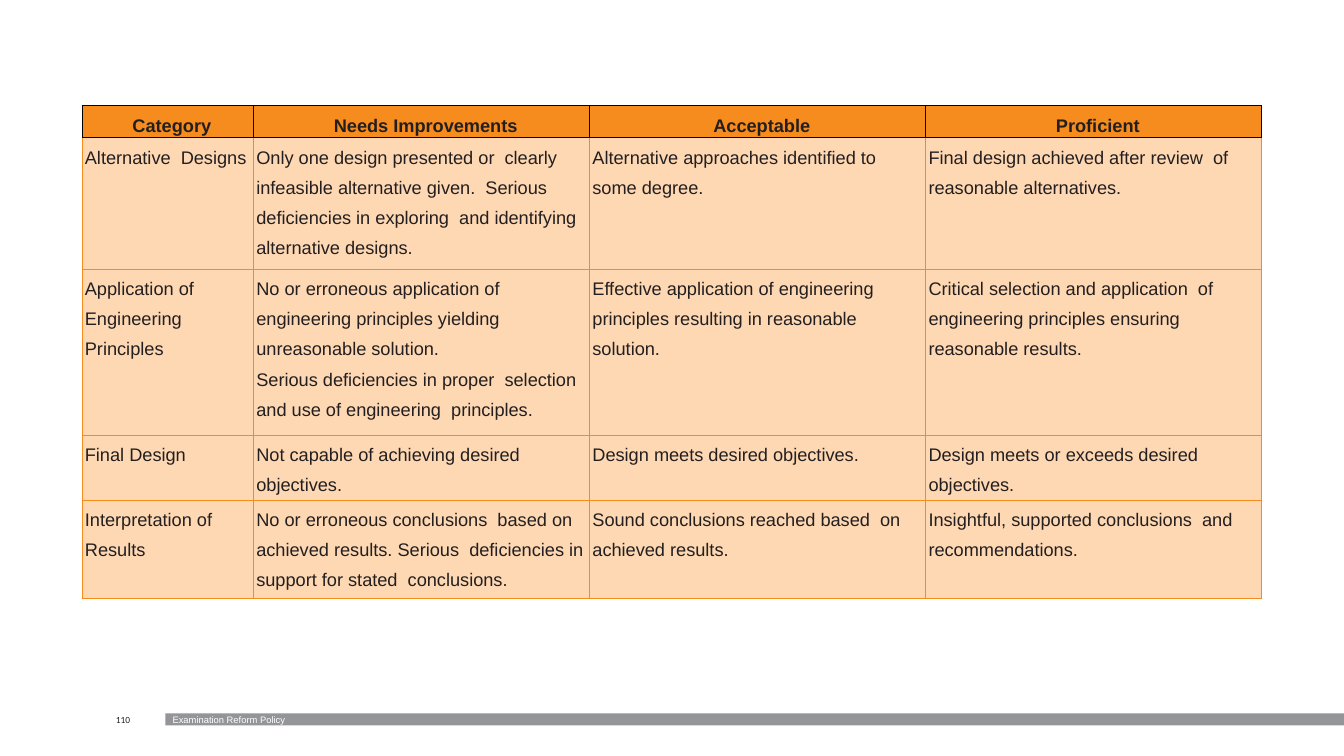
"""Build the design assessment rubric slide."""
from lxml import etree
from pptx import Presentation
from pptx.dml.color import RGBColor
from pptx.enum.shapes import MSO_SHAPE
from pptx.enum.text import MSO_ANCHOR, PP_ALIGN
from pptx.oxml.ns import qn
from pptx.util import Cm, Pt

RECTANGLE = MSO_SHAPE.RECTANGLE
TOP, MIDDLE = MSO_ANCHOR.TOP, MSO_ANCHOR.MIDDLE
LEFT, CENTER = PP_ALIGN.LEFT, PP_ALIGN.CENTER

INK = RGBColor(0x23, 0x1F, 0x20)
BLACK = RGBColor(0, 0, 0)
WHITE = RGBColor(0xFF, 0xFF, 0xFF)
ORANGE = RGBColor(0xF6, 0x8B, 0x1E)
PEACH = RGBColor(0xFE, 0xD8, 0xB3)
GRAY = RGBColor(0x93, 0x95, 0x98)

COLUMN_WIDTHS = [4.32, 8.47, 8.47, 8.47]
ROW_HEIGHTS = [0.8, 3.32, 4.17, 1.64, 2.47]
RUBRIC = [
    ["Category", "Needs Improvements", "Acceptable", "Proficient"],
    ["Alternative  Designs",
     "Only one design presented or  clearly infeasible alternative given.  Serious "
     "deficiencies in exploring  and identifying alternative designs.",
     "Alternative approaches identified to some degree.",
     "Final design achieved after review  of reasonable alternatives."],
    ["Application of  Engineering  Principles",
     "No or erroneous application of  engineering principles yielding  unreasonable solution.\n"
     "Serious deficiencies in proper  selection and use of engineering  principles.",
     "Effective application of engineering  principles resulting in reasonable  solution.",
     "Critical selection and application  of engineering principles ensuring  reasonable results."],
    ["Final Design",
     "Not capable of achieving desired  objectives.",
     "Design meets desired objectives.",
     "Design meets or exceeds desired  objectives."],
    ["Interpretation of  Results",
     "No or erroneous conclusions  based on achieved results. Serious  deficiencies in "
     "support for stated  conclusions.",
     "Sound conclusions reached based  on achieved results.",
     "Insightful, supported conclusions  and recommendations."],
]


def style_text(frame, font, size, color, align, indent, spacing, bold=False):
    for para in frame.paragraphs:
        para.alignment = align
        para.line_spacing = spacing
        para._p.get_or_add_pPr().set("marL", str(Cm(indent)))
        for span in para.runs:
            span.font.name = font
            span.font.size = Pt(size)
            span.font.bold = bold
            span.font.color.rgb = color


def add_borders(cell, colors):
    properties = cell._tc.get_or_add_tcPr()
    for side, color in zip("LRTB", colors):
        line = etree.SubElement(properties, qn(f"a:ln{side}"), w=str(Pt(0.75)))
        fill = etree.SubElement(line, qn("a:solidFill"))
        etree.SubElement(fill, qn("a:srgbClr"), val=str(color))


deck = Presentation()
deck.slide_width, deck.slide_height = Cm(33.87), Cm(19.05)
page = deck.slides.add_slide(deck.slide_layouts[6])

number_box = page.shapes.add_textbox(Cm(2.06), Cm(17.98), Cm(2.08), Cm(0.3))
number_box.text_frame.text = "110"
style_text(number_box.text_frame, "Calibri", 6.7, INK, CENTER, 0, 1.1)

rubric = page.shapes.add_table(
    len(ROW_HEIGHTS), len(COLUMN_WIDTHS), Cm(2.07), Cm(2.66),
    Cm(sum(COLUMN_WIDTHS)), Cm(sum(ROW_HEIGHTS))).table
rubric.first_row = rubric.horz_banding = False
for column, width in zip(rubric.columns, COLUMN_WIDTHS):
    column.width = Cm(width)
for row_index, (row, height) in enumerate(zip(rubric.rows, ROW_HEIGHTS)):
    row.height = Cm(height)
    is_header = row_index == 0
    for cell, wording in zip(row.cells, RUBRIC[row_index]):
        cell.text = wording
        cell.margin_left = cell.margin_top = cell.margin_bottom = 0
        cell.margin_right = Cm(0 if is_header else 0.08)
        cell.vertical_anchor = MIDDLE if is_header else TOP
        style_text(cell.text_frame, "Arial", 13, INK, CENTER if is_header else LEFT,
                   0.2 if is_header else 0.07, 1.48, is_header)
        side_color = BLACK if is_header else ORANGE
        top_color = BLACK if row_index < 2 else ORANGE
        add_borders(cell, [side_color, side_color, top_color, side_color])
        cell.fill.solid()
        cell.fill.fore_color.rgb = ORANGE if is_header else PEACH

footer_bar = page.shapes.add_shape(RECTANGLE, Cm(4.17), Cm(17.98), Cm(29.7), Cm(0.3))
footer_bar.shadow.inherit = False
footer_bar.fill.solid()
footer_bar.fill.fore_color.rgb = GRAY
footer_bar.line.fill.background()
footer_bar.text_frame.text = "Examination Reform Policy"
style_text(footer_bar.text_frame, "Arial", 6.7, WHITE, LEFT, 0.18, 1.0)

for box in (number_box, footer_bar):
    frame = box.text_frame
    frame.word_wrap = True
    frame.vertical_anchor = MIDDLE
    frame.margin_left = frame.margin_right = frame.margin_top = frame.margin_bottom = 0

deck.save("out.pptx")
